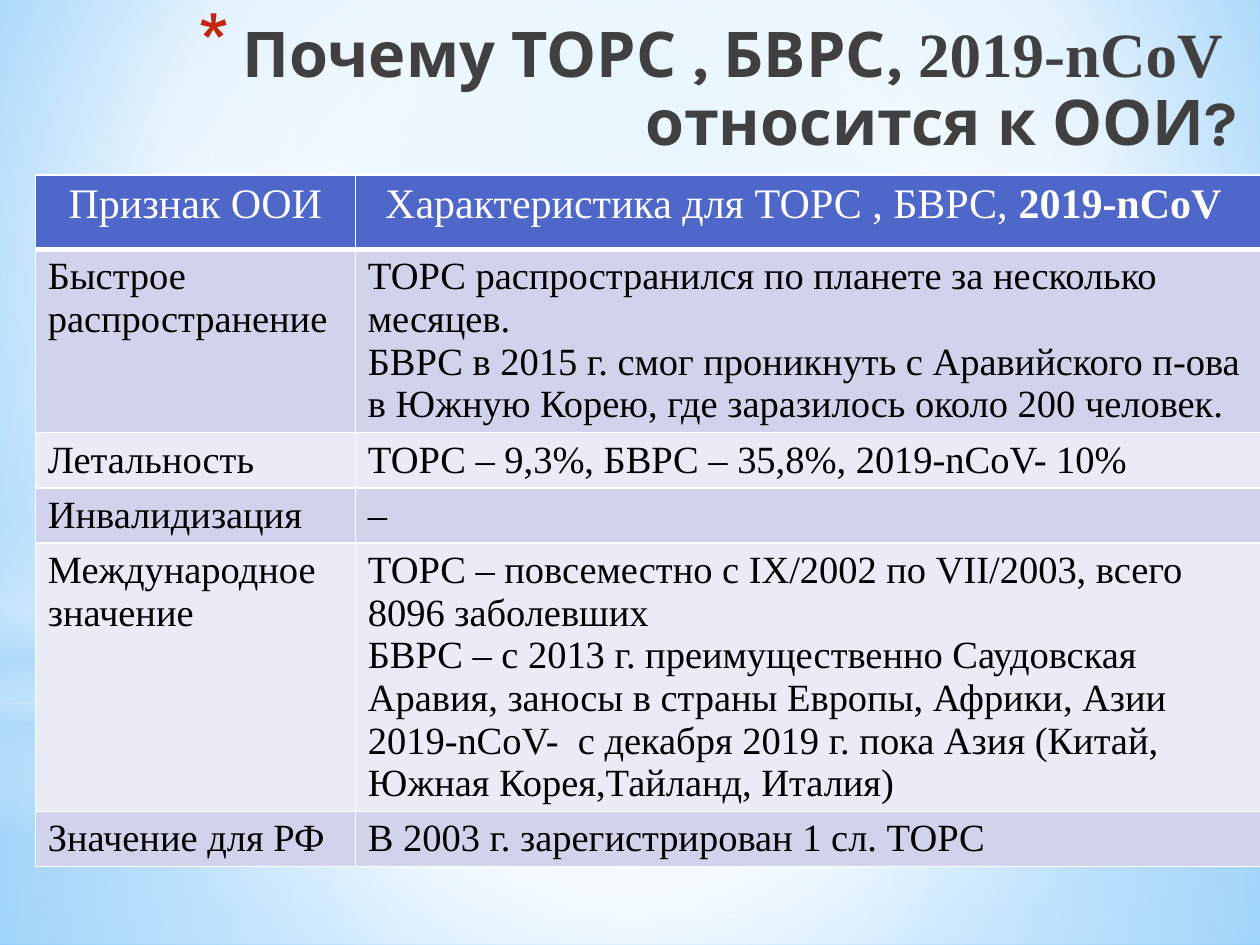
from dataclasses import dataclass

import lxml.etree
import pptx
import pptx.dml.color
import pptx.enum.shapes
import pptx.enum.text
import pptx.oxml
import pptx.oxml.ns
import pptx.util

Inches, Pt = pptx.util.Inches, pptx.util.Pt
RGB = pptx.dml.color.RGBColor.from_string
ALIGN = pptx.enum.text.PP_ALIGN
SHAPE = pptx.enum.shapes.MSO_SHAPE
qn = pptx.oxml.ns.qn
A_NS = pptx.oxml.ns.nsdecls("a")
WIDTH, HEIGHT = Inches(10), Inches(7.5)


@dataclass(frozen=True)
class Theme:
    title_font: str = "Karla"
    body_font: str = "Times New Roman"
    title_size: int = 36
    header_size: int = 24
    body_size: int = 22
    title: str = "404040"
    bullet: str = "C3260C"
    white: str = "FFFFFF"
    black: str = "000000"
    sky: str = "B4DCFA"
    header: str = "4E67C8"
    bands: tuple = ("D0D3EB", "E9EBF5")


@dataclass(frozen=True)
class Gradient:
    """Stops are (position %, colour, opacity %); focus is a rectangle in %, None for vertical."""
    stops: tuple
    focus: tuple | None = (50, 50, 50, 50)


@dataclass(frozen=True)
class Glow:
    """A backdrop shape of full width; top and height are shares of the slide."""
    kind: int
    top: float
    height: float
    gradient: Gradient


@dataclass(frozen=True)
class Run:
    text: str
    font: str
    bold: bool


T = Theme()
BACKDROP = Gradient(((0, "9ED5FF", 100), (60, T.white, 100), (100, "5BB9FF", 100)), (20, 10, 20, 60))
HORIZON = 0.744
GLOWS = [
    Glow(SHAPE.RECTANGLE, HORIZON, 1 - HORIZON,
         Gradient(((0, T.white, 91), (37, T.white, 76), (100, T.sky, 79)))),
    Glow(SHAPE.RECTANGLE, 0, HORIZON,
         Gradient(((0, T.white, 89), (48, T.white, 62), (100, T.sky, 79)))),
    Glow(SHAPE.RECTANGLE, 0.55, 1 / 3,
         Gradient(((0, T.white, 0), (29, T.white, 30), (45, T.sky, 40), (55, T.white, 26),
                   (65, T.sky, 60), (100, T.white, 0)), None)),
    Glow(SHAPE.OVAL, 0.233, HORIZON, Gradient(((0, T.white, 100), (56, T.white, 0)))),
]
TITLE = [
    Run("Почему ТОРС , БВРС, ", T.title_font, True),
    Run("2019-nCoV  ", T.body_font, True),
    Run("относится к ООИ?", T.title_font, True),
]
HEADER = [
    [Run("Признак ООИ", T.body_font, False)],
    [Run("Характеристика для ТОРС , БВРС,", T.body_font, False),
     Run(" 2019-nCoV ", T.body_font, True)],
]
ROWS = [
    ("Быстрое распространение",
     "ТОРС распространился по планете за несколько месяцев.\n"
     "БВРС в 2015 г. смог проникнуть с Аравийского п-ова в Южную Корею, "
     "где заразилось около 200 человек."),
    ("Летальность", "ТОРС – 9,3%, БВРС – 35,8%, 2019-nCoV- 10%"),
    ("Инвалидизация", "–"),
    ("Международное значение",
     "ТОРС – повсеместно с IX/2002 по VII/2003, всего 8096 заболевших\n"
     "БВРС – с 2013 г. преимущественно Саудовская Аравия, заносы в страны Европы, Африки, Азии\n"
     "2019-nCoV-  с декабря 2019 г. пока Азия (Китай, Южная Корея,Тайланд, Италия)"),
    ("Значение для РФ", "В 2003 г. зарегистрирован 1 сл. ТОРС"),
]
COLUMNS = (2.54, 7.19)
HEADER_HEIGHT, ROW_HEIGHT = 0.59, 0.41


def paint(owner: lxml.etree._Element, gradient: Gradient) -> None:
    """Swap the first solid fill inside owner for the gradient."""
    stops = "".join(
        f'<a:gs pos="{at * 1000}"><a:srgbClr val="{colour}"><a:alpha val="{opacity * 1000}"/>'
        f"</a:srgbClr></a:gs>" for at, colour, opacity in gradient.stops)
    if gradient.focus is None:
        direction = '<a:lin ang="5400000" scaled="0"/>'
    else:
        sides = " ".join(f'{side}="{share * 1000}"' for side, share in zip("ltrb", gradient.focus))
        direction = f'<a:path path="circle"><a:fillToRect {sides}/></a:path>'
    solid = owner.find(".//" + qn("a:solidFill"))
    solid.getparent().replace(solid, pptx.oxml.parse_xml(
        f'<a:gradFill {A_NS} rotWithShape="1"><a:gsLst>{stops}</a:gsLst>{direction}</a:gradFill>'))


def add_glow(slide: pptx.slide.Slide, glow: Glow) -> None:
    shape = slide.shapes.add_shape(glow.kind, 0, int(glow.top * HEIGHT), WIDTH, int(glow.height * HEIGHT))
    shape.shadow.inherit = False
    shape.line.fill.background()
    shape.fill.solid()
    shape.fill.fore_color.rgb = RGB(T.white)
    paint(shape.element, glow.gradient)


def write_runs(paragraph, runs: list[Run], size: int, colour: str) -> None:
    paragraph.font.size = Pt(size)
    paragraph.font.color.rgb = RGB(colour)
    for part in runs:
        run = paragraph.add_run()
        run.text = part.text
        run.font.name = part.font
        run.font.bold = part.bold
        run.font.size = Pt(size)
        run.font.color.rgb = RGB(colour)


def format_title(slide: pptx.slide.Slide) -> None:
    title = slide.shapes.title
    slide.shapes.element.append(title.element)  # in front of the glows
    title.left, title.top, title.width, title.height = map(Inches, (0.04, 0.13, 9.88, 0.83))
    frame = title.text_frame
    frame.word_wrap = True
    frame.auto_size = pptx.enum.text.MSO_AUTO_SIZE.NONE
    frame.vertical_anchor = pptx.enum.text.MSO_ANCHOR.TOP
    heading = frame.paragraphs[0]
    heading.alignment = ALIGN.RIGHT
    heading.line_spacing = 0.9
    write_runs(heading, TITLE, T.title_size, T.title)
    properties = heading._p.get_or_add_pPr()
    properties.set("marL", str(Inches(0.35)))
    properties.set("indent", str(-Inches(0.35)))
    bullet = pptx.oxml.parse_xml(
        f'<a:pPr {A_NS}><a:buClr><a:srgbClr val="{T.bullet}"/></a:buClr>'
        f'<a:buSzPct val="128000"/><a:buChar char="*"/></a:pPr>')
    defaults = properties.find(qn("a:defRPr"))
    for part in list(bullet):
        defaults.addprevious(part)


def style_cell(cell, fill: str, bottom: int = 1) -> None:
    """Give the cell its white borders (bottom in points) and its fill."""
    properties = cell._tc.get_or_add_tcPr()
    for side, weight in zip("LRTB", (1, 1, 1, bottom)):
        properties.append(pptx.oxml.parse_xml(
            f'<a:ln{side} {A_NS} w="{Pt(weight)}"><a:solidFill><a:srgbClr val="{T.white}"/>'
            f"</a:solidFill></a:ln{side}>"))
    cell.fill.solid()
    cell.fill.fore_color.rgb = RGB(fill)


def add_signs_table(slide: pptx.slide.Slide) -> None:
    frame = slide.shapes.add_table(len(ROWS) + 1, len(COLUMNS), Inches(0.28), Inches(1.39),
                                   Inches(sum(COLUMNS)), Inches(HEADER_HEIGHT + ROW_HEIGHT * len(ROWS)))
    signs = frame.table
    for column, width in zip(signs.columns, COLUMNS):
        column.width = Inches(width)
    for index, row in enumerate(signs.rows):
        row.height = Inches(ROW_HEIGHT if index else HEADER_HEIGHT)
    for column, runs in enumerate(HEADER):
        cell = signs.cell(0, column)
        style_cell(cell, T.header, bottom=3)
        heading = cell.text_frame.paragraphs[0]
        heading.alignment = ALIGN.CENTER
        write_runs(heading, runs, T.header_size, T.white)
    for index, texts in enumerate(ROWS):
        for column, text in enumerate(texts):
            cell = signs.cell(index + 1, column)
            style_cell(cell, T.bands[index % 2])
            for number, line in enumerate(text.split("\n")):
                body = cell.text_frame
                paragraph = body.add_paragraph() if number else body.paragraphs[0]
                write_runs(paragraph, [Run(line, T.body_font, False)], T.body_size, T.black)


def main() -> None:
    deck = pptx.Presentation()
    deck.slide_width, deck.slide_height = WIDTH, HEIGHT
    slide = deck.slides.add_slide(deck.slide_layouts.get_by_name("Title Only"))
    slide.background.fill.solid()
    slide.background.fill.fore_color.rgb = RGB(T.white)
    paint(slide.element, BACKDROP)
    for glow in GLOWS:
        add_glow(slide, glow)
    format_title(slide)
    add_signs_table(slide)
    deck.save("out.pptx")


if __name__ == "__main__":
    main()
